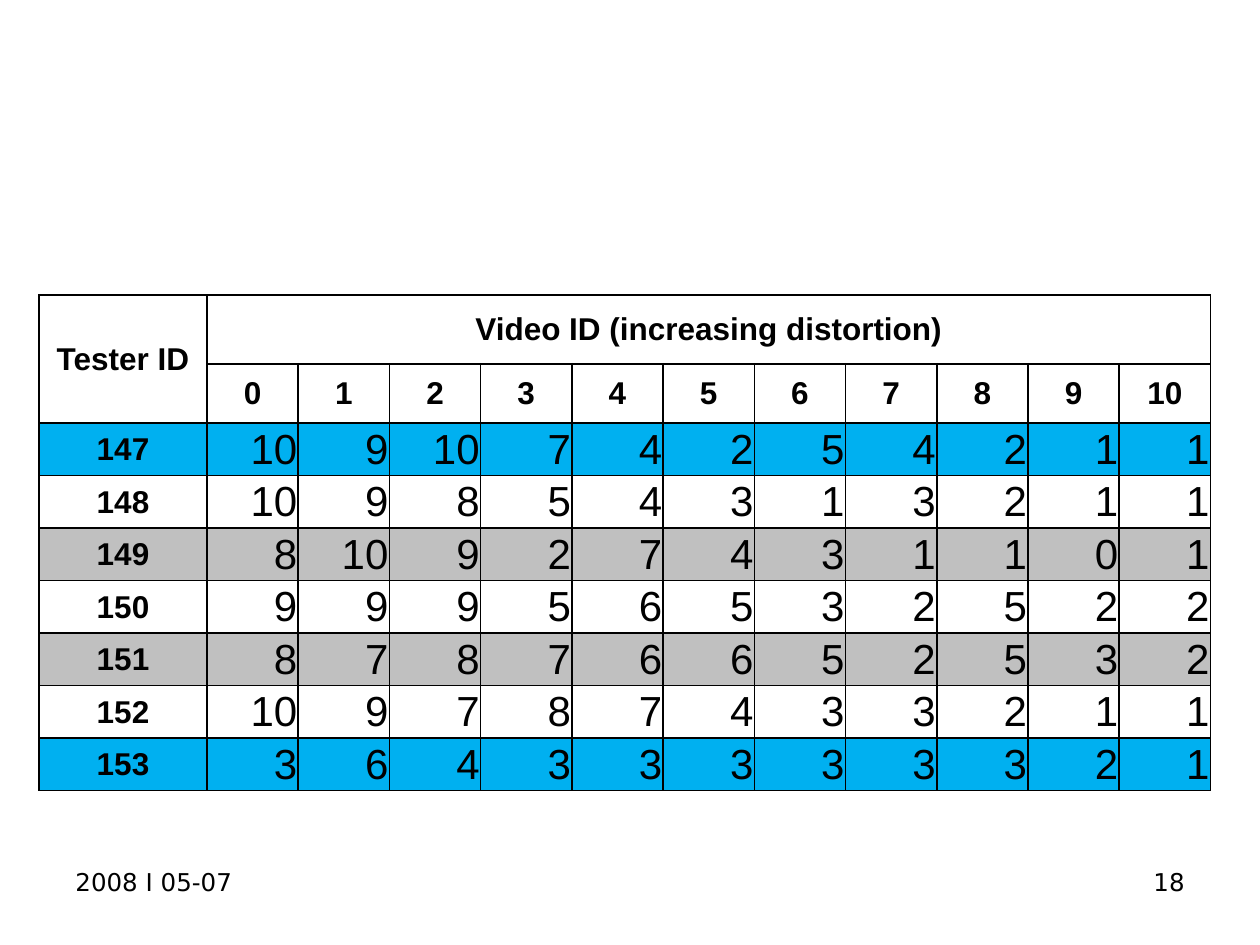
import pptx
import pptx.util
import pptx.dml.color
import pptx.enum.text
import pptx.oxml
import pptx.oxml.ns

SCALE = 914400 / 126
RGB = pptx.dml.color.RGBColor
BLACK = RGB(0x00, 0x00, 0x00)
BLUE = RGB(0x00, 0xB0, 0xF0)
GRAY = RGB(0xC0, 0xC0, 0xC0)
ALIGN = pptx.enum.text.PP_ALIGN
PLAIN_STYLE = "{2D5ABB26-0587-4C30-8999-92F81FD0307C}"

SCORES = {
    147: [10, 9, 10, 7, 4, 2, 5, 4, 2, 1, 1],
    148: [10, 9, 8, 5, 4, 3, 1, 3, 2, 1, 1],
    149: [8, 10, 9, 2, 7, 4, 3, 1, 1, 0, 1],
    150: [9, 9, 9, 5, 6, 5, 3, 2, 5, 2, 2],
    151: [8, 7, 8, 7, 6, 6, 5, 2, 5, 3, 2],
    152: [10, 9, 7, 8, 7, 4, 3, 3, 2, 1, 1],
    153: [3, 6, 4, 3, 3, 3, 3, 3, 3, 2, 1],
}
FILLS = {147: BLUE, 149: GRAY, 151: GRAY, 153: BLUE}
VIDEOS = 11


def px(count):
    return pptx.util.Emu(round(count * SCALE))


def write(frame, text, size, face, align, bold=False):
    frame.text = text
    para = frame.paragraphs[0]
    para.alignment = align
    font = para.runs[0].font
    font.size = pptx.util.Pt(size)
    font.name = face
    font.bold = bold
    font.color.rgb = BLACK


def add_footer(slide, left, text, align):
    box = slide.shapes.add_textbox(px(left), px(861), px(294), px(65))
    box.text_frame.word_wrap = True
    write(box.text_frame, text, 14, "DejaVu Sans", align)


def set_border(cell, row):
    """Draw all four edges, heavier around the row of video numbers."""
    heavy = {"T": row in (1, 2), "B": row in (0, 1)}
    props = cell._tc.get_or_add_tcPr()
    for spot, side in enumerate("LRTB"):
        width = pptx.util.Pt(1.5 if heavy.get(side) else 1)
        line = pptx.oxml.parse_xml(
            f'<a:ln{side} {pptx.oxml.ns.nsdecls("a")} w="{width}">'
            f'<a:solidFill><a:srgbClr val="{BLACK}"/></a:solidFill>'
            f'</a:ln{side}>')
        props.insert(spot, line)


def fill_cell(table, row, col, text, fill=None, score=False):
    cell = table.cell(row, col)
    cell.margin_left = cell.margin_right = cell.margin_top = px(1)
    cell.margin_bottom = 0
    cell.vertical_anchor = pptx.enum.text.MSO_ANCHOR.MIDDLE
    if fill is None:
        cell.fill.background()
    else:
        cell.fill.solid()
        cell.fill.fore_color.rgb = fill
    set_border(cell, row)
    if score:
        write(cell.text_frame, str(text), 24, "Arial", ALIGN.RIGHT)
    else:
        write(cell.text_frame, str(text), 18, "Arial", ALIGN.CENTER, True)


def add_scores(slide):
    frame = slide.shapes.add_table(len(SCORES) + 2, VIDEOS + 1,
                                   px(39), px(295), px(1172), px(496))
    table = frame.table
    table.first_row = table.horz_banding = False
    style = table._tbl.tblPr.find(pptx.oxml.ns.qn("a:tableStyleId"))
    style.text = PLAIN_STYLE

    widths = [168] + [1004 / VIDEOS] * VIDEOS
    heights = [69, 59] + [368 / len(SCORES)] * len(SCORES)
    for column, width in zip(table.columns, widths):
        column.width = px(width)
    for line, height in zip(table.rows, heights):
        line.height = px(height)

    table.cell(0, 0).merge(table.cell(1, 0))
    table.cell(0, 1).merge(table.cell(0, VIDEOS))
    fill_cell(table, 0, 0, "Tester ID")
    fill_cell(table, 0, 1, "Video ID (increasing distortion)")
    for video in range(VIDEOS):
        fill_cell(table, 1, video + 1, video)
    for row, (tester, scores) in enumerate(SCORES.items(), 2):
        fill = FILLS.get(tester)
        fill_cell(table, row, 0, tester, fill)
        for col, score in enumerate(scores, 1):
            fill_cell(table, row, col, score, fill, score=True)


def main():
    deck = pptx.Presentation()
    deck.slide_width = px(1260)
    deck.slide_height = px(945)
    slide = deck.slides.add_slide(deck.slide_layouts[6])
    add_footer(slide, 63, "2008 I 05-07", ALIGN.LEFT)
    add_footer(slide, 903, "18", ALIGN.RIGHT)
    add_scores(slide)
    deck.save("out.pptx")


if __name__ == "__main__":
    main()
